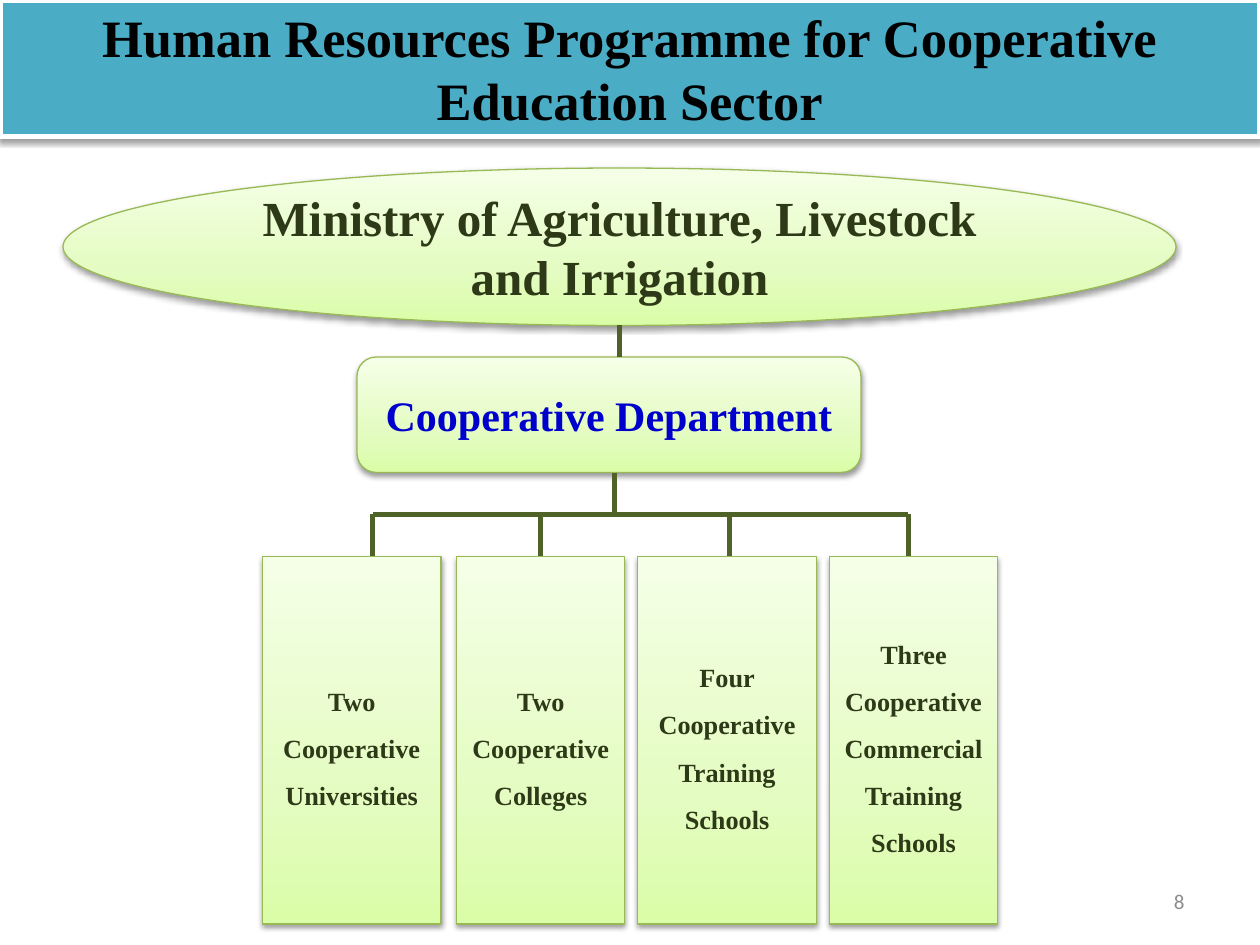
"""Build the organisation chart slide for the cooperative education sector."""
from lxml.etree import SubElement
from pptx import Presentation
from pptx.dml.color import RGBColor
from pptx.enum.shapes import MSO_CONNECTOR, MSO_SHAPE
from pptx.enum.text import MSO_ANCHOR, PP_ALIGN
from pptx.oxml.ns import qn
from pptx.util import Inches, Pt

TITLE = "Human Resources Programme for Cooperative Education Sector"
MINISTRY = "Ministry of Agriculture, Livestock and Irrigation"
DEPARTMENT = "Cooperative Department"
PAGE = "8"
SCHOOLS = [
    {"lines": ["Two Cooperative Universities"], "left": 25, "width": 17, "drop": 35.5},
    {"lines": ["Two", "Cooperative ", "Colleges"], "left": 43.5, "width": 16, "drop": 51.5},
    {"lines": ["Four", "Cooperative Training Schools"], "left": 60.75, "width": 17, "drop": 69.5},
    {"lines": ["Three", "Cooperative Commercial Training Schools"], "left": 79, "width": 16, "drop": 86.5},
]
COLORS = {
    "banner": "4BACC6", "white": "FFFFFF", "title": "000000", "edge": "98B955",
    "text": "2E3917", "department": "0000CC", "link": "4F6228", "page": "8C8C8C",
}
GREEN_STOPS = [(0, "DAFDA7"), (35, "E4FCC2"), (100, "F5FFE7")]
SERIF = "Times New Roman"
COLUMNS, ROWS = 120, 90
WIDTH, HEIGHT = Inches(10), Inches(7.5)
MINISTRY_TOP, MINISTRY_ROWS = 16, 15
DEPARTMENT_TOP, DEPARTMENT_ROWS = 34, 11
BUS_ROW, SCHOOL_TOP, SCHOOL_ROWS = 49, 53, 35
MINISTRY_STEM, DEPARTMENT_STEM = 59, 58.5


def place(left, top, width, height):
    unit_x, unit_y = WIDTH / COLUMNS, HEIGHT / ROWS
    return [round(n) for n in (left * unit_x, top * unit_y, width * unit_x, height * unit_y)]


def rgb(name):
    return RGBColor.from_string(COLORS[name])


def write(shape, lines, size, color, font=SERIF, bold=True, align=PP_ALIGN.CENTER, spacing=None):
    frame = shape.text_frame
    frame.word_wrap = True
    frame.vertical_anchor = MSO_ANCHOR.MIDDLE
    for index, line in enumerate(lines):
        paragraph = frame.add_paragraph() if index else frame.paragraphs[0]
        paragraph.alignment = align
        paragraph.line_spacing = spacing
        run = paragraph.add_run()
        run.text = line
        run.font.size, run.font.name, run.font.bold = Pt(size), font, bold
        run.font.color.rgb = rgb(color)


def add_shadow(shape):
    shape.shadow.inherit = False
    effects = shape._element.spPr.find(qn("a:effectLst"))
    shadow = SubElement(effects, qn("a:outerShdw"), blurRad="40000", dist="20000",
                        dir="5400000", rotWithShape="0")
    black = SubElement(shadow, qn("a:srgbClr"), val="000000")
    SubElement(black, qn("a:alpha"), val="38000")


def fill_green(shape):
    shape.fill.gradient()
    shape.fill.gradient_angle = 90
    stops = shape._element.spPr.find(qn("a:gradFill")).find(qn("a:gsLst"))
    for stop in list(stops):
        stops.remove(stop)
    for percent, color in GREEN_STOPS:
        stop = SubElement(stops, qn("a:gs"), pos=str(percent * 1000))
        SubElement(stop, qn("a:srgbClr"), val=color)


def add_box(slide, kind, box, lines, size, color="text", spacing=None):
    shape = slide.shapes.add_shape(kind, *place(*box))
    fill_green(shape)
    shape.line.color.rgb, shape.line.width = rgb("edge"), Pt(0.75)
    add_shadow(shape)
    write(shape, lines, size, color, spacing=spacing)


def add_link(slide, *ends):
    link = slide.shapes.add_connector(MSO_CONNECTOR.STRAIGHT, *place(*ends))
    link.line.color.rgb, link.line.width = rgb("link"), Pt(3)
    SubElement(link._element.spPr, qn("a:effectLst"))


def add_banner(slide):
    banner = slide.shapes.add_shape(MSO_SHAPE.RECTANGLE, *place(0, 0, COLUMNS, 13))
    banner.fill.solid()
    banner.fill.fore_color.rgb = rgb("banner")
    banner.line.color.rgb, banner.line.width = rgb("white"), Pt(3)
    add_shadow(banner)
    write(banner, [TITLE], 30, "title")


def main():
    deck = Presentation()
    deck.slide_width, deck.slide_height = WIDTH, HEIGHT
    slide = deck.slides.add_slide(deck.slide_layouts[6])

    add_box(slide, MSO_SHAPE.OVAL, (6, MINISTRY_TOP, 106, MINISTRY_ROWS), [MINISTRY], 28)
    add_box(slide, MSO_SHAPE.ROUNDED_RECTANGLE, (34, DEPARTMENT_TOP, 48, DEPARTMENT_ROWS),
            [DEPARTMENT], 24, "department")
    for school in SCHOOLS:
        add_box(slide, MSO_SHAPE.RECTANGLE,
                (school["left"], SCHOOL_TOP, school["width"], SCHOOL_ROWS),
                school["lines"], 15, spacing=1.5)

    add_link(slide, SCHOOLS[0]["drop"], BUS_ROW, SCHOOLS[-1]["drop"], BUS_ROW)
    for school in SCHOOLS:
        add_link(slide, school["drop"], BUS_ROW, school["drop"], SCHOOL_TOP)
    add_link(slide, DEPARTMENT_STEM, DEPARTMENT_TOP + DEPARTMENT_ROWS, DEPARTMENT_STEM, BUS_ROW)
    add_link(slide, MINISTRY_STEM, MINISTRY_TOP + MINISTRY_ROWS, MINISTRY_STEM, DEPARTMENT_TOP)

    page = slide.shapes.add_textbox(*place(86, 83.4, 28, 4.8))
    write(page, [PAGE], 12, "page", "Calibri", False, PP_ALIGN.RIGHT)
    add_banner(slide)
    deck.save("out.pptx")


if __name__ == "__main__":
    main()
